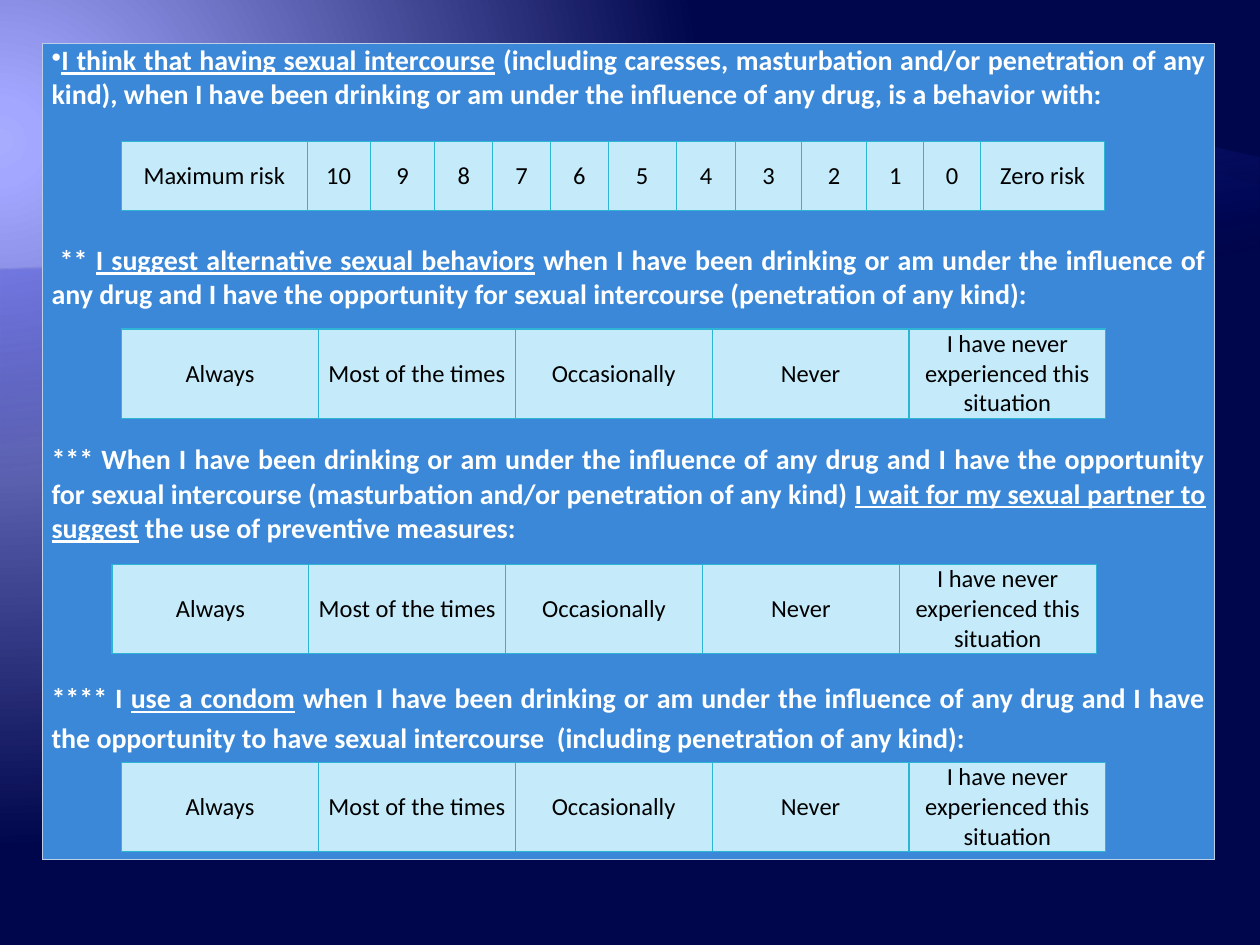
from dataclasses import dataclass

from pptx import Presentation
from pptx.dml.color import RGBColor
from pptx.enum.text import MSO_ANCHOR, PP_ALIGN
from pptx.oxml import parse_xml
from pptx.oxml.ns import nsdecls, qn
from pptx.util import Pt


@dataclass(frozen=True)
class Theme:
    font: str = "Calibri"
    question_size: int = 16
    answer_size: int = 14
    question_text: str = "FFFFFF"
    answer_text: str = "000000"
    panel: str = "3B88D8"
    panel_border: str = "BDCEE7"
    answer: str = "C5EBFA"
    answer_border: str = "2EB5D5"
    glow: tuple = ((0, "A8ACFF", 100), (5, "A3A7FF", 100), (90, "00064B", 100))
    back_wave: tuple = ((65, "000D9E", 0), (100, "797FFF", 55))
    front_wave: tuple = ((65, "000D9E", 0), (100, "A3A7FF", 30))


THEME = Theme()
SLIDE_W, SLIDE_H = 720, 540
QUESTION_GAP = 75  # room for one answer scale between questions

# Each question: text before, underlined text, text after
QUESTIONS = [
    ("", "I think that having sexual intercourse",
     " (including caresses, masturbation and/or penetration of any kind), when I have "
     "been drinking or am under the influence of any drug, is a behavior with:"),
    (" ** ", "I suggest alternative sexual behaviors",
     " when I have been drinking or am under the influence of any drug and I have the "
     "opportunity for sexual intercourse (penetration of any kind):"),
    ("*** When I have been drinking or am under the influence of any drug and I have the "
     "opportunity for sexual intercourse (masturbation and/or penetration of any kind) ",
     "I wait for my sexual partner to suggest", " the use of preventive measures:"),
    ("**** I ", "use a condom",
     " when I have been drinking or am under the influence of any drug and I have the "
     "opportunity to have sexual intercourse  (including penetration of any kind):"),
]
RISK_SCALE = ["Maximum risk", *map(str, range(10, -1, -1)), "Zero risk"]
RISK_WIDTHS = [106, 36, 37, 33, 33, 33, 39, 34, 37.5, 37.5, 32.5, 32.5, 71]
FREQUENCIES = ["Always", "Most of the times", "Occasionally", "Never",
               "I have never experienced this situation"]
FREQUENCY_WIDTHS = [112.5] * len(FREQUENCIES)
FREQUENCY_SPOTS = [(69.5, 188), (64, 322.5), (69.5, 435.5)]


def set_gradient(solid, stops, direction):
    """Put a gradient in the place of a solid fill element."""
    marks = "".join(
        f'<a:gs pos="{pos * 1000}"><a:srgbClr val="{color}">'
        f'<a:alpha val="{alpha * 1000}"/></a:srgbClr></a:gs>'
        for pos, color, alpha in stops)
    grad = parse_xml(f'<a:gradFill {nsdecls("a")} rotWithShape="1">'
                     f'<a:gsLst>{marks}</a:gsLst>{direction}</a:gradFill>')
    solid.getparent().replace(solid, grad)


def set_background(slide):
    slide.background.fill.solid()
    slide.background.fill.fore_color.rgb = RGBColor.from_string(THEME.glow[-1][1])
    set_gradient(slide.element.find(".//" + qn("a:solidFill")), THEME.glow,
                 '<a:path path="circle"><a:fillToRect l="20000" t="30000" '
                 'r="135000" b="100000"/></a:path>')


def bezier(points, steps=32):
    """Points along a cubic curve."""
    for i in range(steps + 1):
        t = i / steps
        weights = ((1 - t) ** 3, 3 * t * (1 - t) ** 2, 3 * t * t * (1 - t), t ** 3)
        yield tuple(sum(w * pt[axis] for w, pt in zip(weights, points))
                    for axis in (0, 1))


def add_wave(slide, curve, bottom, stops):
    builder = slide.shapes.build_freeform(SLIDE_W, bottom, scale=Pt(1))
    builder.add_line_segments([(0, bottom), *bezier(curve)], close=True)
    sp = builder.convert_to_shape()
    sp.shadow.inherit = False
    sp.line.fill.background()
    sp.fill.solid()
    sp.fill.fore_color.rgb = RGBColor.from_string(stops[-1][1])
    set_gradient(sp.element.find(".//" + qn("a:solidFill")), stops,
                 f'<a:lin ang="{260 * 60000}" scaled="0"/>')


def format_run(r, size, color, bold=False, underline=False):
    r.font.name, r.font.size = THEME.font, Pt(size)
    r.font.bold, r.font.underline = bold, underline
    r.font.color.rgb = RGBColor.from_string(color)


def format_cell(cell, fill, border, anchor):
    cell.fill.solid()
    cell.fill.fore_color.rgb = RGBColor.from_string(fill)
    cell.vertical_anchor = anchor
    cell.margin_left = cell.margin_right = Pt(5)
    cell.margin_top = cell.margin_bottom = 0
    props = cell.fill._xPr
    for i, side in enumerate("LRTB"):
        props.insert(i, parse_xml(
            f'<a:ln{side} {nsdecls("a")} w="9525"><a:solidFill>'
            f'<a:srgbClr val="{border}"/></a:solidFill></a:ln{side}>'))


def add_row_table(slide, left, top, widths, height, fill, border,
                  anchor=MSO_ANCHOR.MIDDLE):
    """Add a one-row table and return its cells."""
    table = slide.shapes.add_table(1, len(widths), Pt(left), Pt(top),
                                   Pt(sum(widths)), Pt(height)).table
    table.first_row = table.horz_banding = False
    for column, width in zip(table.columns, widths):
        column.width = Pt(width)
    cells = list(table.rows[0].cells)
    for cell in cells:
        format_cell(cell, fill, border, anchor)
    return cells


def add_questions(slide):
    cell, = add_row_table(slide, 24.5, 25, [669.5], 466, THEME.panel,
                          THEME.panel_border, MSO_ANCHOR.TOP)
    tf = cell.text_frame
    for i, parts in enumerate(QUESTIONS):
        p = tf.add_paragraph() if i else tf.paragraphs[0]
        p.alignment = PP_ALIGN.JUSTIFY
        p.space_before = Pt(QUESTION_GAP if i else 0)
        p.space_after = Pt(0)
        for text, underline in zip(parts, (False, True, False)):
            if text:
                r = p.add_run()
                r.text = text
                format_run(r, THEME.question_size, THEME.question_text, True, underline)
    # The last question is set looser; the first one has a bullet
    tf.paragraphs[-1].line_spacing = 1.15
    props = tf.paragraphs[0]._p.get_or_add_pPr()
    props.set("marL", "0")
    props.set("indent", "0")
    props.append(parse_xml(f'<a:buChar {nsdecls("a")} char="•"/>'))


def add_scale(slide, left, top, labels, widths, height):
    cells = add_row_table(slide, left, top, widths, height, THEME.answer,
                          THEME.answer_border)
    for cell, label in zip(cells, labels):
        p = cell.text_frame.paragraphs[0]
        p.text = label
        p.alignment = PP_ALIGN.CENTER
        format_run(p.runs[0], THEME.answer_size, THEME.answer_text)


def main():
    prs = Presentation()
    prs.slide_width, prs.slide_height = Pt(SLIDE_W), Pt(SLIDE_H)
    slide = prs.slides.add_slide(prs.slide_layouts[6])

    # Backdrop
    set_background(slide)
    add_wave(slide, [(0, 153.5), (360, 153.5), (384.5, 3.5), (SLIDE_W, 90)],
             528, THEME.back_wave)
    add_wave(slide, [(0, 153.5), (360, 153.5), (430.5, 22.5), (SLIDE_W, 106)],
             458.5, THEME.front_wave)

    # Questions and their answer scales
    add_questions(slide)
    add_scale(slide, 69.5, 81, RISK_SCALE, RISK_WIDTHS, 39.5)
    for left, top in FREQUENCY_SPOTS:
        add_scale(slide, left, top, FREQUENCIES, FREQUENCY_WIDTHS, 50.5)

    prs.save("out.pptx")


if __name__ == "__main__":
    main()
